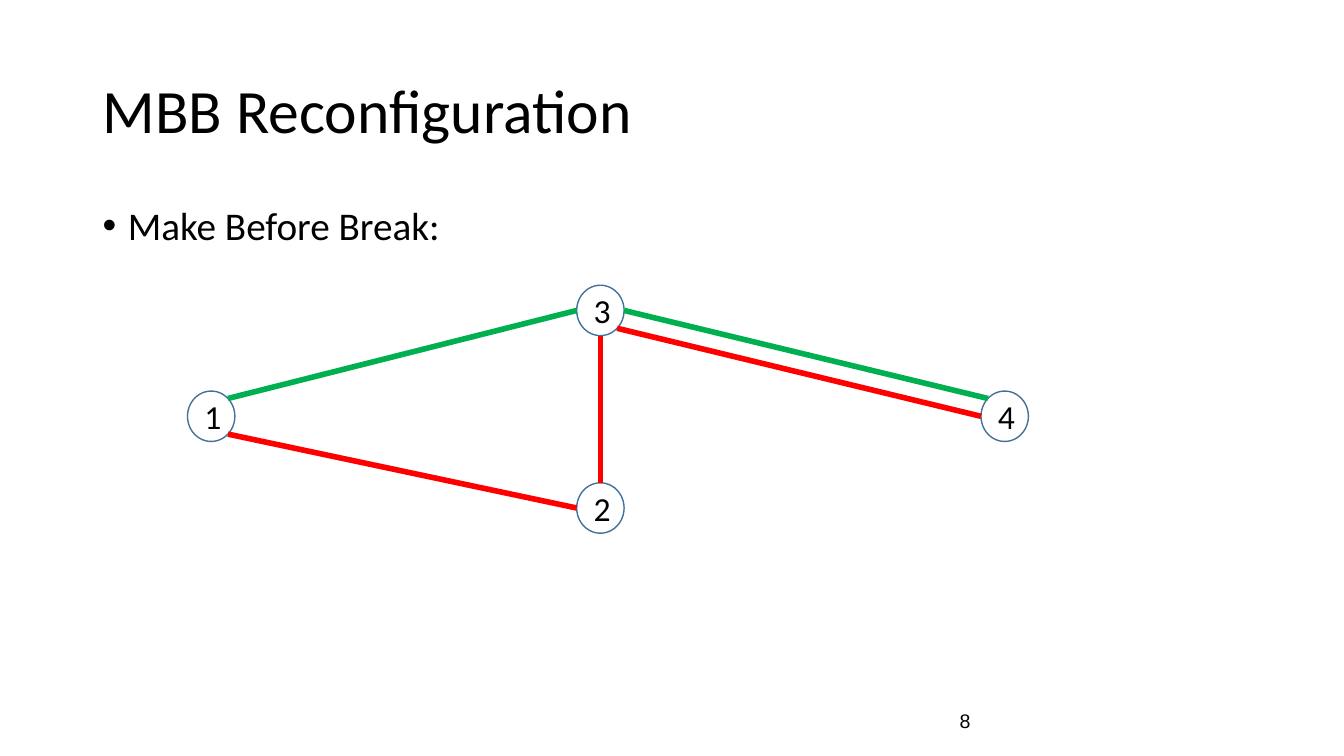
from math import cos, radians, sin

from lxml.etree import SubElement
from pptx import Presentation
from pptx.dml.color import RGBColor
from pptx.enum.shapes import MSO_CONNECTOR as Connector, MSO_SHAPE as Preset
from pptx.enum.text import MSO_ANCHOR as Anchor, PP_ALIGN as Align
from pptx.oxml.ns import qn
from pptx.util import Emu, Pt

PX = 9144  # 100 px to the inch
SLIDE_SIZE = (1333, 750)
BLACK, WHITE, NODE_LINE, GREEN, RED = "000000", "FFFFFF", "42719B", "00B050", "FF0000"

# box, text, format, has a bullet
TEXTS = [
    ((92, 40, 1150, 145), "MBB Reconfiguration",
     {"size": 44, "anchor": Anchor.MIDDLE, "spacing": 0.9}, False),
    ((92, 200, 1150, 476), "Make Before Break:", {"size": 28, "spacing": 0.9}, True),
    ((942, 695, 300, 40), "8",
     {"size": 14, "font": "Arial", "anchor": Anchor.MIDDLE}, False),
]

NODE_SIZE = (47, 50)
NODES = {"1": (186, 388), "2": (572, 479), "4": (973, 388), "3": (572, 283)}

# Directions on a node's rim, in degrees clockwise from the right
RIGHT, LOWER_RIGHT, BOTTOM, LEFT, UPPER_LEFT, TOP, UPPER_RIGHT = 0, 45, 90, 180, 225, 270, 315

# colour, (from node, side), (to node, side)
LINKS = [
    (GREEN, ("1", UPPER_RIGHT), ("3", LEFT)),
    (GREEN, ("4", UPPER_LEFT), ("3", RIGHT)),
    (RED, ("4", LEFT), ("3", LOWER_RIGHT)),
    (RED, ("1", LOWER_RIGHT), ("2", LEFT)),
    (RED, ("2", TOP), ("3", BOTTOM)),
]


def emu(*lengths):
    return [Emu(round(length * PX)) for length in lengths]


def color(value):
    return RGBColor.from_string(value)


def write(shape, text, size, font="Calibri", anchor=Anchor.TOP,
          align=Align.LEFT, spacing=1.0):
    frame = shape.text_frame
    paragraph = frame.paragraphs[0]
    paragraph.text = text
    paragraph.font.color.rgb = color(BLACK)
    formats = [
        (frame, {"word_wrap": True, "vertical_anchor": anchor}),
        (paragraph, {"alignment": align, "line_spacing": spacing}),
        (paragraph.font, {"name": font, "size": Pt(size)}),
    ]
    for target, values in formats:
        for name, value in values.items():
            setattr(target, name, value)
    return paragraph


def add_bullet(paragraph, indent=25):
    properties = paragraph._p.get_or_add_pPr()
    properties.set("marL", str(indent * PX))
    properties.set("indent", str(-indent * PX))
    SubElement(properties, qn("a:buFont"), typeface="Arial")
    SubElement(properties, qn("a:buChar"), char="•")


def rim_point(node, angle):
    left, top = NODES[node]
    width, height = NODE_SIZE
    return (left + width / 2 * (1 + cos(radians(angle))),
            top + height / 2 * (1 + sin(radians(angle))))


def add_node(slide, label, position):
    shape = slide.shapes.add_shape(Preset.OVAL, *emu(*position, *NODE_SIZE))
    shape.shadow.inherit = False
    shape.fill.solid()
    shape.fill.fore_color.rgb = color(WHITE)
    shape.line.color.rgb = color(NODE_LINE)
    shape.line.width = Pt(1)
    write(shape, label, 24, anchor=Anchor.MIDDLE, align=Align.CENTER)


def add_link(slide, line_color, start, end):
    link = slide.shapes.add_connector(
        Connector.STRAIGHT, *emu(*rim_point(*start), *rim_point(*end)))
    link.line.color.rgb = color(line_color)
    link.line.width = Pt(4)
    SubElement(link._element.spPr, qn("a:effectLst"))


def main():
    presentation = Presentation()
    presentation.slide_width, presentation.slide_height = emu(*SLIDE_SIZE)
    slide = presentation.slides.add_slide(presentation.slide_layouts[6])
    for box, text, values, has_bullet in TEXTS:
        paragraph = write(slide.shapes.add_textbox(*emu(*box)), text, **values)
        if has_bullet:
            add_bullet(paragraph)
    for label, position in NODES.items():
        add_node(slide, label, position)
    for link in LINKS:
        add_link(slide, *link)
    presentation.save("out.pptx")


if __name__ == "__main__":
    main()
